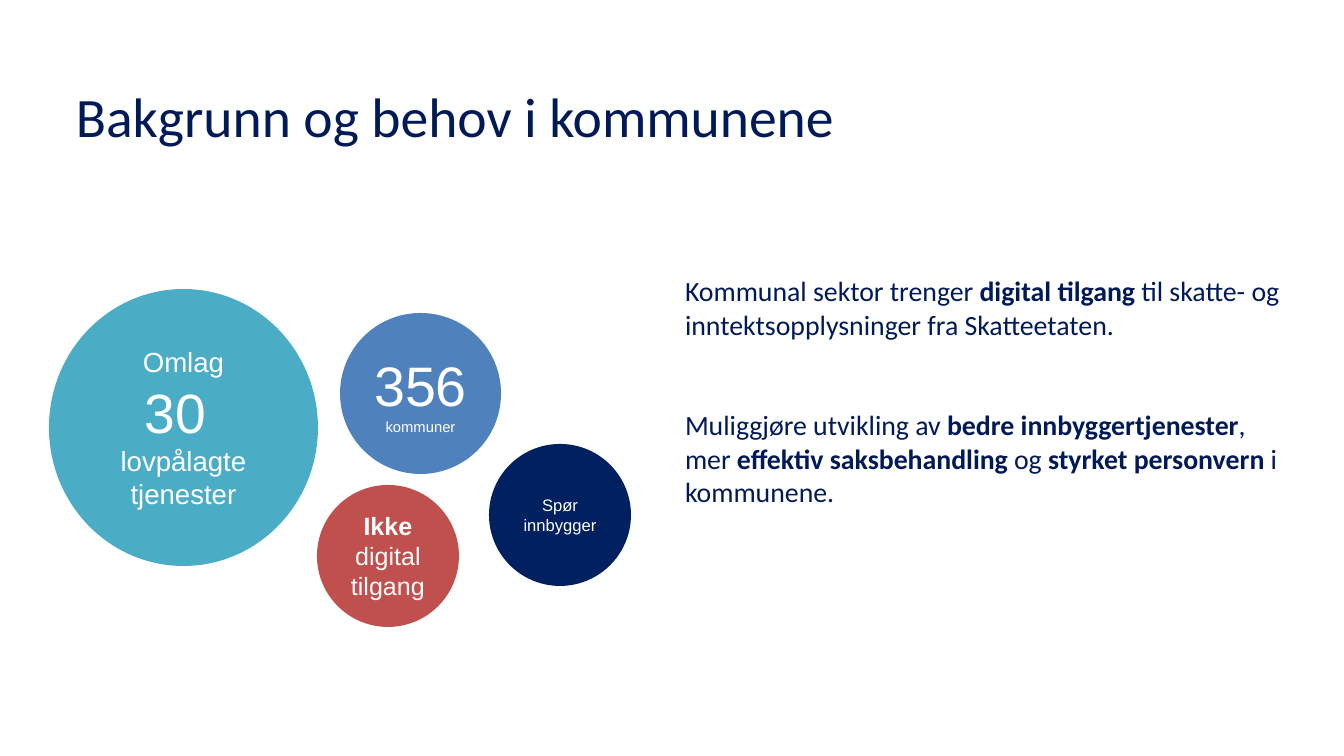
from dataclasses import dataclass

from pptx import Presentation
from pptx.dml.color import RGBColor
from pptx.enum.shapes import MSO_SHAPE
from pptx.enum.text import MSO_ANCHOR, PP_ALIGN
from pptx.slide import Slide
from pptx.text.text import TextFrame
from pptx.util import Emu, Pt

EMU_PER_PX = 914400 / 134.4
NAVY = RGBColor(0x00, 0x1A, 0x58)
WHITE = RGBColor(0xFF, 0xFF, 0xFF)
BLUE = RGBColor(0x4F, 0x81, 0xBD)
TEAL = RGBColor(0x4B, 0xAC, 0xC6)
RED = RGBColor(0xC0, 0x50, 0x4D)
DARK_BLUE = RGBColor(0x00, 0x20, 0x60)


@dataclass(frozen=True)
class Words:
    text: str
    size: float
    bold: bool = False


@dataclass(frozen=True)
class Box:
    left: int
    top: int
    width: int
    height: int


@dataclass(frozen=True)
class Bubble:
    box: Box
    fill: RGBColor
    paragraphs: list[list[Words]]


def px(length: int) -> Emu:
    return Emu(round(length * EMU_PER_PX))


def place(box: Box) -> tuple[Emu, Emu, Emu, Emu]:
    return px(box.left), px(box.top), px(box.width), px(box.height)


def write(frame: TextFrame, paragraphs: list[list[Words]], font: str, color: RGBColor,
          align: PP_ALIGN, anchor: MSO_ANCHOR, gap: float = 0, inset_top: int = 5) -> None:
    frame.word_wrap = True
    frame.vertical_anchor = anchor
    frame.margin_left = frame.margin_right = px(9)
    frame.margin_top, frame.margin_bottom = px(inset_top), px(5)
    for index, words_list in enumerate(paragraphs):
        paragraph = frame.add_paragraph() if index else frame.paragraphs[0]
        paragraph.alignment = align
        if index and gap:
            paragraph.space_before = Pt(gap)
        for words in words_list:
            run = paragraph.add_run()
            run.text = words.text
            run.font.name = font
            run.font.size = Pt(words.size)
            run.font.bold = words.bold
            run.font.color.rgb = color


def draw_text(slide: Slide, box: Box, paragraphs: list[list[Words]],
              gap: float = 0, inset_top: int = 5) -> None:
    frame = slide.shapes.add_textbox(*place(box)).text_frame
    write(frame, paragraphs, "Calibri", NAVY, PP_ALIGN.LEFT, MSO_ANCHOR.TOP, gap, inset_top)


def draw_bubble(slide: Slide, bubble: Bubble) -> None:
    circle = slide.shapes.add_shape(MSO_SHAPE.OVAL, *place(bubble.box))
    circle.shadow.inherit = False
    circle.fill.solid()
    circle.fill.fore_color.rgb = bubble.fill
    circle.line.fill.background()
    write(circle.text_frame, bubble.paragraphs, "Arial", WHITE,
          PP_ALIGN.CENTER, MSO_ANCHOR.MIDDLE)


BODY = 14.9
NEEDS = [
    [Words("Kommunal sektor trenger ", BODY), Words("digital tilgang ", BODY, True),
     Words("til skatte- og inntektsopplysninger fra Skatteetaten.", BODY)],
    [Words("Muliggjøre utvikling av ", BODY), Words("bedre innbyggertjenester", BODY, True),
     Words(", mer ", BODY), Words("effektiv saksbehandling ", BODY, True),
     Words("og ", BODY), Words("styrket personvern ", BODY, True),
     Words("i kommunene.", BODY)],
]
BUBBLES = [
    Bubble(Box(340, 313, 161, 161), BLUE,
           [[Words("356", 29.8), Words(" ", 23.7), Words("kommuner", 7.9)]]),
    Bubble(Box(49, 289, 269, 277), TEAL,
           [[Words("Omlag", 14.8)], [Words("30 ", 29.6)],
            [Words("lovpålagte tjenester", 14.8)]]),
    Bubble(Box(317, 485, 142, 142), RED,
           [[Words("Ikke", 13.4, True), Words(" digital tilgang", 13.4)]]),
    Bubble(Box(489, 444, 142, 142), DARK_BLUE, [[Words("Spør innbygger", 8.9)]]),
]


def main() -> None:
    presentation = Presentation()
    presentation.slide_width, presentation.slide_height = px(1344), px(756)
    slide = presentation.slides.add_slide(presentation.slide_layouts[6])
    draw_text(slide, Box(67, 81, 1210, 125),
              [[Words("Bakgrunn og behov i kommunene", 29.8)]], inset_top=1)
    draw_text(slide, Box(676, 269, 618, 266), NEEDS, gap=36)
    for bubble in BUBBLES:
        draw_bubble(slide, bubble)
    presentation.save("out.pptx")


if __name__ == "__main__":
    main()
